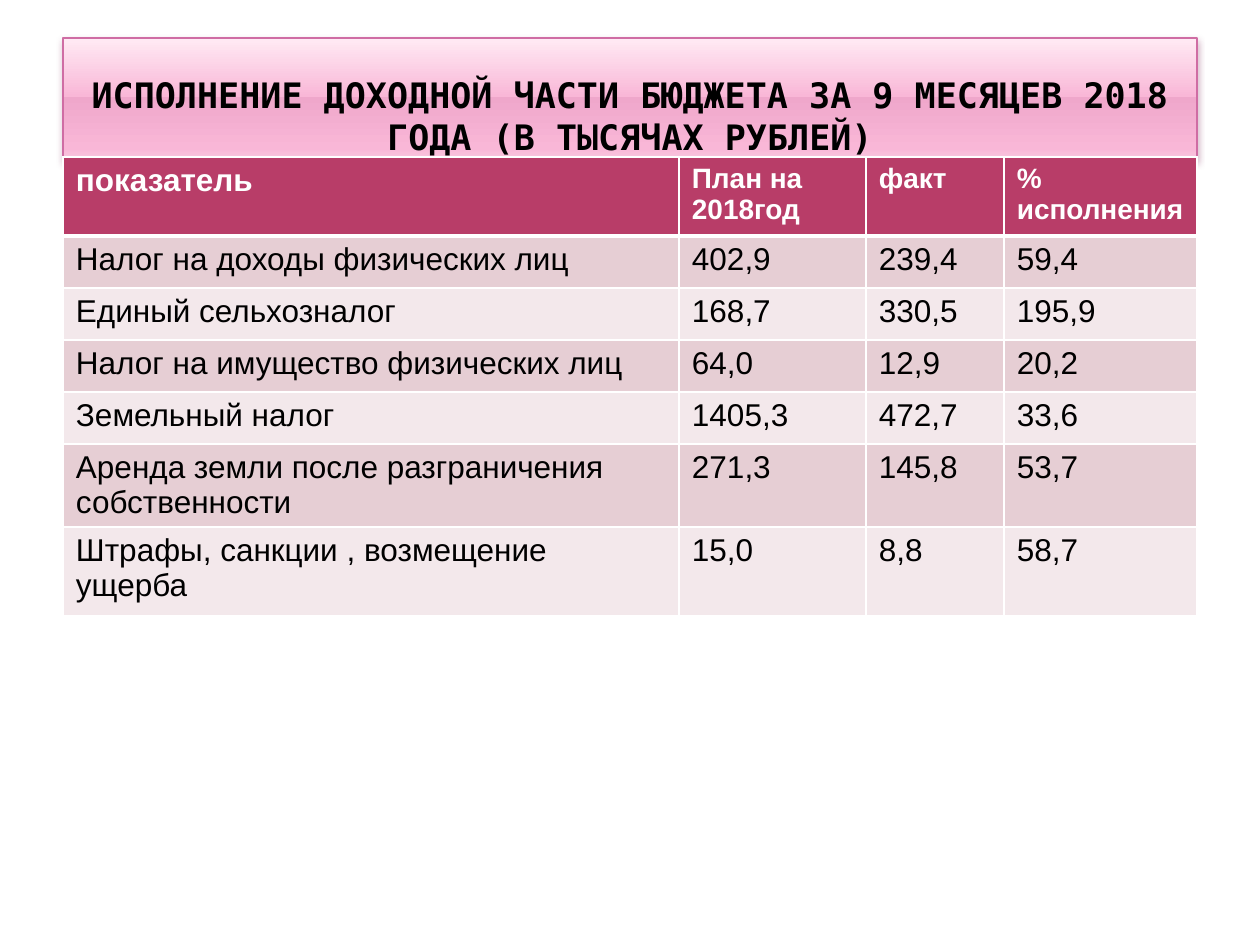
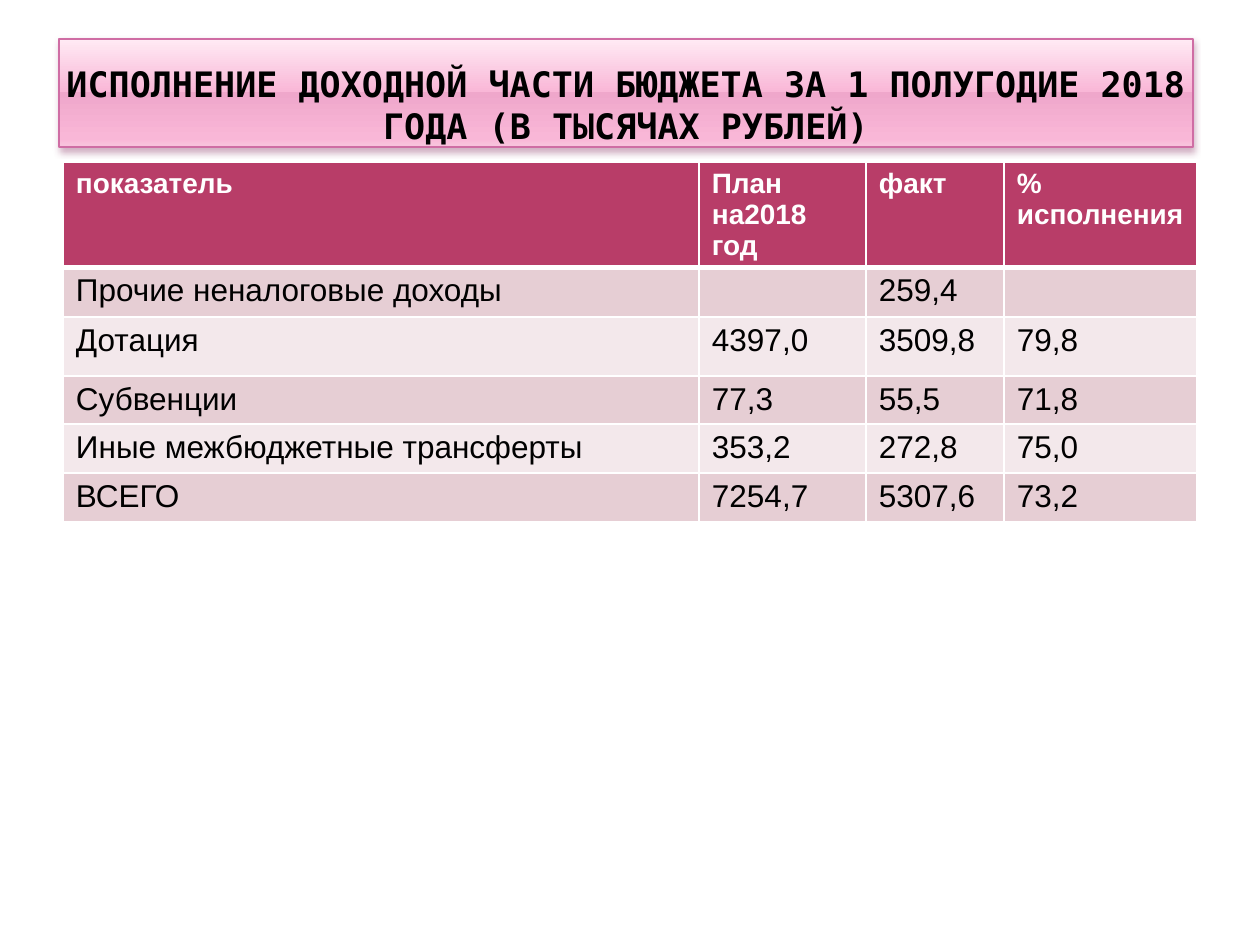
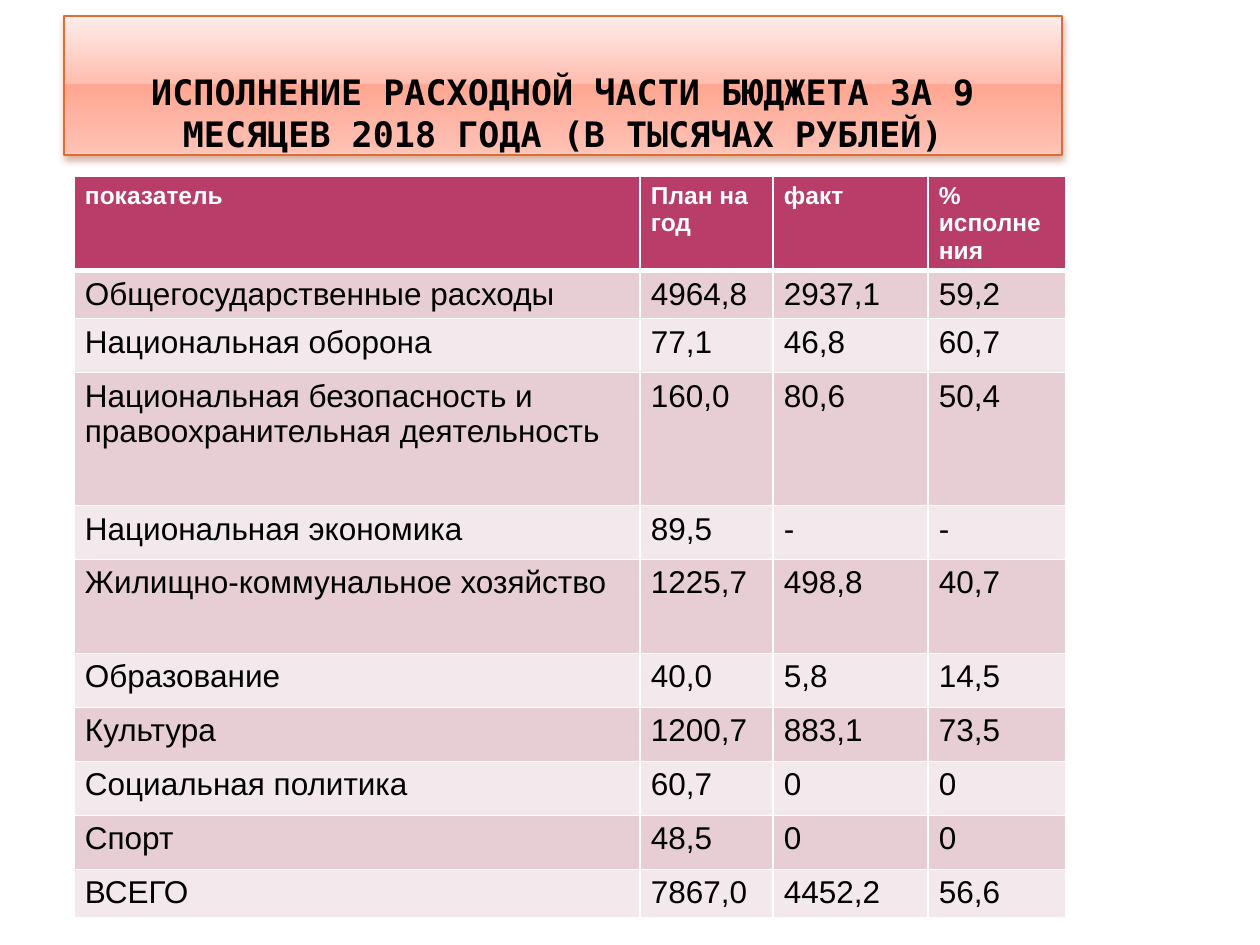
import lxml.etree
import pptx
import pptx.dml.color
import pptx.enum.text
import pptx.oxml
import pptx.oxml.ns
import pptx.util

PIXELS_PER_INCH = 126
TITLE_FONT = "DejaVu Sans Mono"
TABLE_FONT = "Arial"

RGB = pptx.dml.color.RGBColor
BLACK = RGB(0x00, 0x00, 0x00)
WHITE = RGB(0xFF, 0xFF, 0xFF)
HEADER_FILL = RGB(0xB8, 0x3D, 0x68)
BAND_FILLS = (RGB(0xE6, 0xCE, 0xD4), RGB(0xF3, 0xE8, 0xEB))

GRADIENT_POSITIONS = (0, 49, 49.1, 92, 100)
PINK = {
    "stops": (RGB(0xFF, 0xEA, 0xF4), RGB(0xF9, 0xB7, 0xD7), RGB(0xEF, 0xA7, 0xCB),
              RGB(0xF9, 0xB7, 0xD7), RGB(0xF8, 0xC4, 0xDD)),
    "line": RGB(0xCF, 0x6D, 0xA4),
    "shadow": RGB(0x89, 0x32, 0x63),
}
ORANGE = {
    "stops": (RGB(0xFF, 0xED, 0xEA), RGB(0xFF, 0xBD, 0xAF), RGB(0xFF, 0xA7, 0x93),
              RGB(0xFF, 0xBD, 0xAF), RGB(0xFF, 0xC8, 0xBC)),
    "line": RGB(0xDE, 0x6C, 0x36),
    "shadow": RGB(0x9C, 0x37, 0x07),
}

SLIDES = [
    {
        "title": "ИСПОЛНЕНИЕ ДОХОДНОЙ ЧАСТИ БЮДЖЕТА ЗА 9 МЕСЯЦЕВ 2018 ГОДА (В ТЫСЯЧАХ РУБЛЕЙ)",
        "title_box": (63, 38, 1134, 120),
        "palette": PINK,
        "table_origin": (63, 157),
        "columns": (616, 187, 138, 193),
        "heights": (79, 52, 52, 52, 52, 83, 89),
        "inset": 13,
        "header_sizes": (18, 16, 16, 16),
        "rows": [
            ("показатель", "План на 2018год", "факт", "% исполнения"),
            ("Налог на доходы физических лиц", "402,9", "239,4", "59,4"),
            ("Единый сельхозналог", "168,7", "330,5", "195,9"),
            ("Налог на имущество физических лиц", "64,0", "12,9", "20,2"),
            ("Земельный налог", "1405,3", "472,7", "33,6"),
            ("Аренда земли после разграничения собственности", "271,3", "145,8", "53,7"),
            ("Штрафы, санкции , возмещение ущерба", "15,0", "8,8", "58,7"),
        ],
    },
    {
        "title": "ИСПОЛНЕНИЕ ДОХОДНОЙ ЧАСТИ БЮДЖЕТА ЗА 1 ПОЛУГОДИЕ 2018 ГОДА (В ТЫСЯЧАХ РУБЛЕЙ)",
        "title_box": (59, 39, 1134, 108),
        "palette": PINK,
        "table_origin": (63, 162),
        "columns": (636, 167, 138, 193),
        "heights": (104, 50, 59, 48, 49, 49),
        "inset": 13,
        "header_sizes": (16, 16, 16, 16),
        "rows": [
            ("показатель", "План на2018\nгод", "факт", "% исполнения"),
            ("Прочие неналоговые доходы", "", "259,4", ""),
            ("Дотация", "4397,0", "3509,8", "79,8"),
            ("Субвенции", "77,3", "55,5", "71,8"),
            ("Иные межбюджетные трансферты", "353,2", "272,8", "75,0"),
            ("ВСЕГО", "7254,7", "5307,6", "73,2"),
        ],
    },
    {
        "title": "ИСПОЛНЕНИЕ РАСХОДНОЙ ЧАСТИ БЮДЖЕТА ЗА 9 МЕСЯЦЕВ 2018 ГОДА (В ТЫСЯЧАХ РУБЛЕЙ)",
        "title_box": (64, 16, 998, 139),
        "palette": ORANGE,
        "table_origin": (74, 176),
        "columns": (566, 133, 155, 138),
        "heights": (94, 48, 54, 133, 54, 94, 54, 54, 54, 54, 48),
        "inset": 11,
        "header_sizes": (14, 14, 14, 14),
        "rows": [
            ("показатель", "План на год", "факт", "% исполнения"),
            ("Общегосударственные расходы", "4964,8", "2937,1", "59,2"),
            ("Национальная оборона", "77,1", "46,8", "60,7"),
            ("Национальная безопасность и правоохранительная деятельность",
             "160,0", "80,6", "50,4"),
            ("Национальная экономика", "89,5", "-", "-"),
            ("Жилищно-коммунальное хозяйство", "1225,7", "498,8", "40,7"),
            ("Образование", "40,0", "5,8", "14,5"),
            ("Культура", "1200,7", "883,1", "73,5"),
            ("Социальная политика", "60,7", "0", "0"),
            ("Спорт", "48,5", "0", "0"),
            ("ВСЕГО", "7867,0", "4452,2", "56,6"),
        ],
    },
]


def px(length):
    """Turn pixels into EMU."""
    return pptx.util.Inches(length / PIXELS_PER_INCH)


def add_element(parent, tag, **attributes):
    """Append a drawing element with the given attributes."""
    element = lxml.etree.SubElement(parent, pptx.oxml.ns.qn(tag))
    for name, value in attributes.items():
        element.set(name, str(value))
    return element


def set_font(paragraph, name, size, color, bold):
    """Format all the text of a paragraph."""
    font = paragraph.font
    font.name = name
    font.size = pptx.util.Pt(size)
    font.bold = bold
    font.color.rgb = color


def paint_gradient(shape, colors):
    """Fill a shape with a vertical glossy gradient."""
    shape.fill.gradient()
    shape.fill.gradient_angle = 270
    stops = shape.element.spPr.find(".//" + pptx.oxml.ns.qn("a:gsLst"))
    for stop in list(stops):
        stops.remove(stop)
    for position, color in zip(GRADIENT_POSITIONS, colors):
        stop = add_element(stops, "a:gs", pos=round(position * 1000))
        add_element(stop, "a:srgbClr", val=color)


def add_shadow(shape, color):
    """Give a shape a soft shadow below it."""
    shape.shadow.inherit = False
    effects = shape.element.spPr.find(pptx.oxml.ns.qn("a:effectLst"))
    shadow = add_element(effects, "a:outerShdw", blurRad=pptx.util.Pt(4), dist=pptx.util.Pt(2),
                         dir=5400000, algn="t", rotWithShape=0)
    tint = add_element(shadow, "a:srgbClr", val=color)
    add_element(tint, "a:alpha", val=38000)


def format_title(title, text, box, palette):
    """Place the title placeholder as a glossy band."""
    title.left, title.top, title.width, title.height = map(px, box)
    paint_gradient(title, palette["stops"])
    title.line.color.rgb = palette["line"]
    title.line.width = pptx.util.Pt(0.9)
    add_shadow(title, palette["shadow"])
    frame = title.text_frame
    frame.text = text
    frame.word_wrap = True
    frame.auto_size = pptx.enum.text.MSO_AUTO_SIZE.NONE
    frame.vertical_anchor = pptx.enum.text.MSO_ANCHOR.BOTTOM
    frame.margin_left = frame.margin_right = px(6)
    frame.margin_top = frame.margin_bottom = 0
    paragraph = frame.paragraphs[0]
    paragraph.alignment = pptx.enum.text.PP_ALIGN.CENTER
    set_font(paragraph, TITLE_FONT, 20, BLACK, True)


def set_borders(cell, top, bottom):
    """Draw white borders, with the top and bottom widths in points."""
    properties = cell._tc.get_or_add_tcPr()
    for side, width in (("L", 1), ("R", 1), ("T", top), ("B", bottom)):
        line = add_element(properties, "a:ln" + side, w=pptx.util.Pt(width))
        fill = add_element(line, "a:solidFill")
        add_element(fill, "a:srgbClr", val=WHITE)


def format_cell(cell, text, row, header_size, inset):
    """Write and colour a cell according to its row."""
    is_header = row == 0
    set_borders(cell, 3 if row == 1 else 1, 3 if is_header else 1)
    cell.fill.solid()
    cell.fill.fore_color.rgb = HEADER_FILL if is_header else BAND_FILLS[(row - 1) % 2]
    cell.margin_left = cell.margin_right = px(inset)
    cell.margin_top = cell.margin_bottom = px(6)
    cell.text_frame.text = text
    for paragraph in cell.text_frame.paragraphs:
        if is_header:
            set_font(paragraph, TABLE_FONT, header_size, WHITE, True)
        else:
            set_font(paragraph, TABLE_FONT, 18, BLACK, False)


def add_budget_table(page, content):
    """Add the table of budget indicators."""
    rows, columns, heights = content["rows"], content["columns"], content["heights"]
    left, top = content["table_origin"]
    box = map(px, (left, top, sum(columns), sum(heights)))
    table = page.shapes.add_table(len(rows), len(columns), *box).table
    table.horz_banding = False
    for column, width in zip(table.columns, columns):
        column.width = px(width)
    for row, height in zip(table.rows, heights):
        row.height = px(height)
    for row, texts in enumerate(rows):
        for column, (text, size) in enumerate(zip(texts, content["header_sizes"])):
            format_cell(table.cell(row, column), text, row, size, content["inset"])


def add_budget_slide(deck, content):
    """Add a slide with a title band and a budget table."""
    page = deck.slides.add_slide(deck.slide_layouts.get_by_name("Title Only"))
    format_title(page.shapes.title, content["title"], content["title_box"], content["palette"])
    add_budget_table(page, content)


def main():
    """Build and save the deck."""
    deck = pptx.Presentation()
    deck.slide_width, deck.slide_height = px(1260), px(945)
    for content in SLIDES:
        add_budget_slide(deck, content)
    deck.save("out.pptx")


if __name__ == "__main__":
    main()
